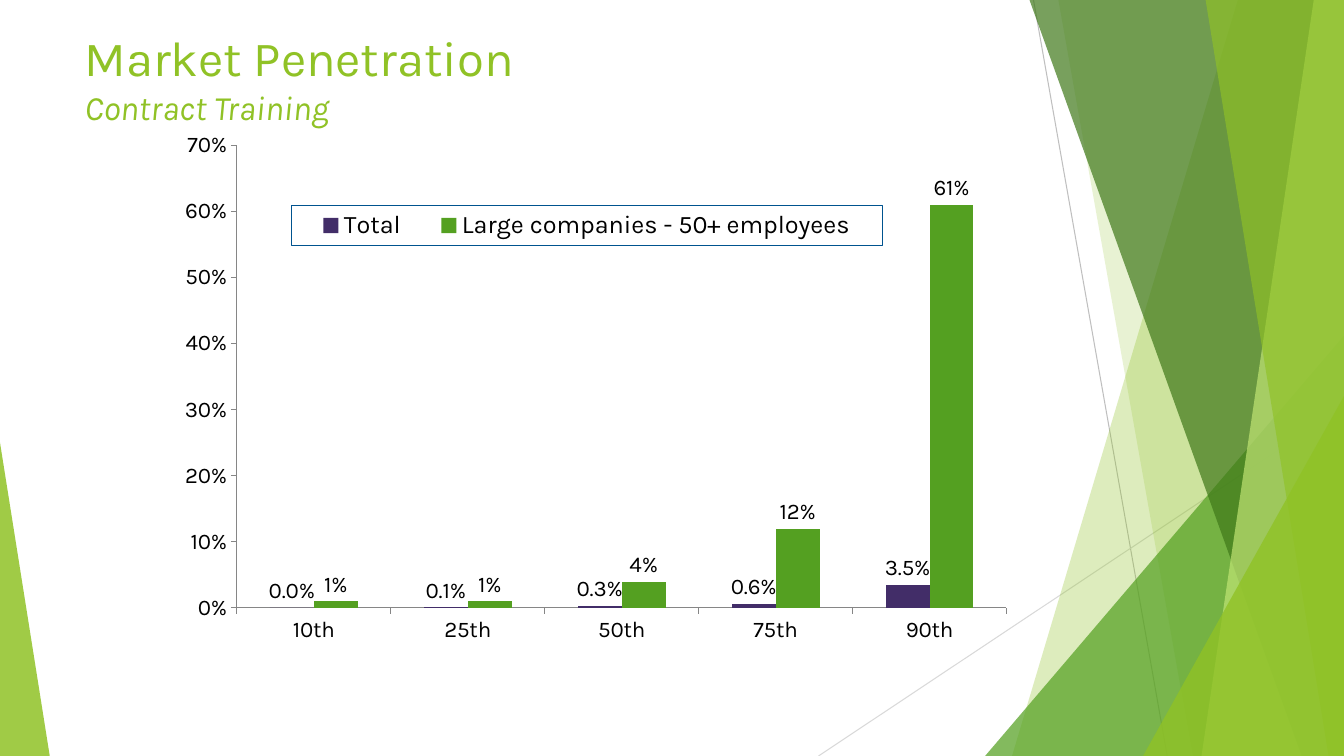
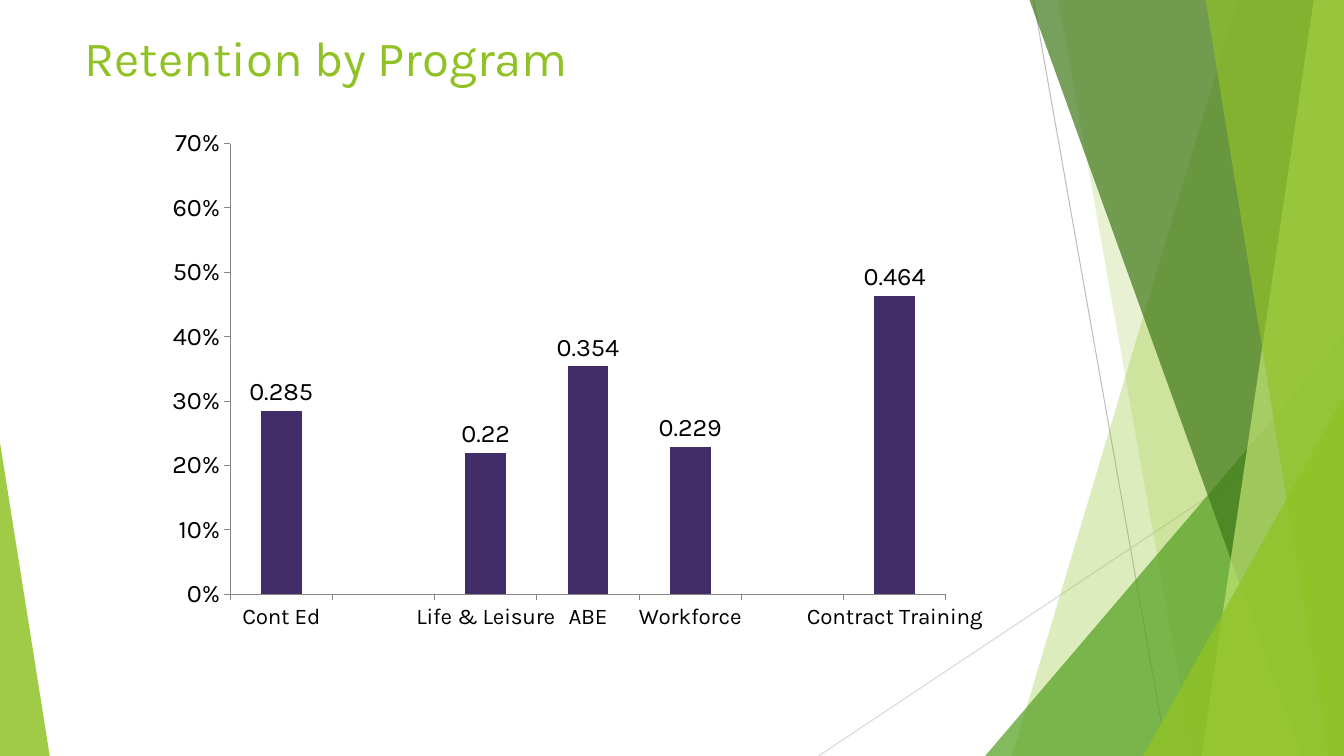
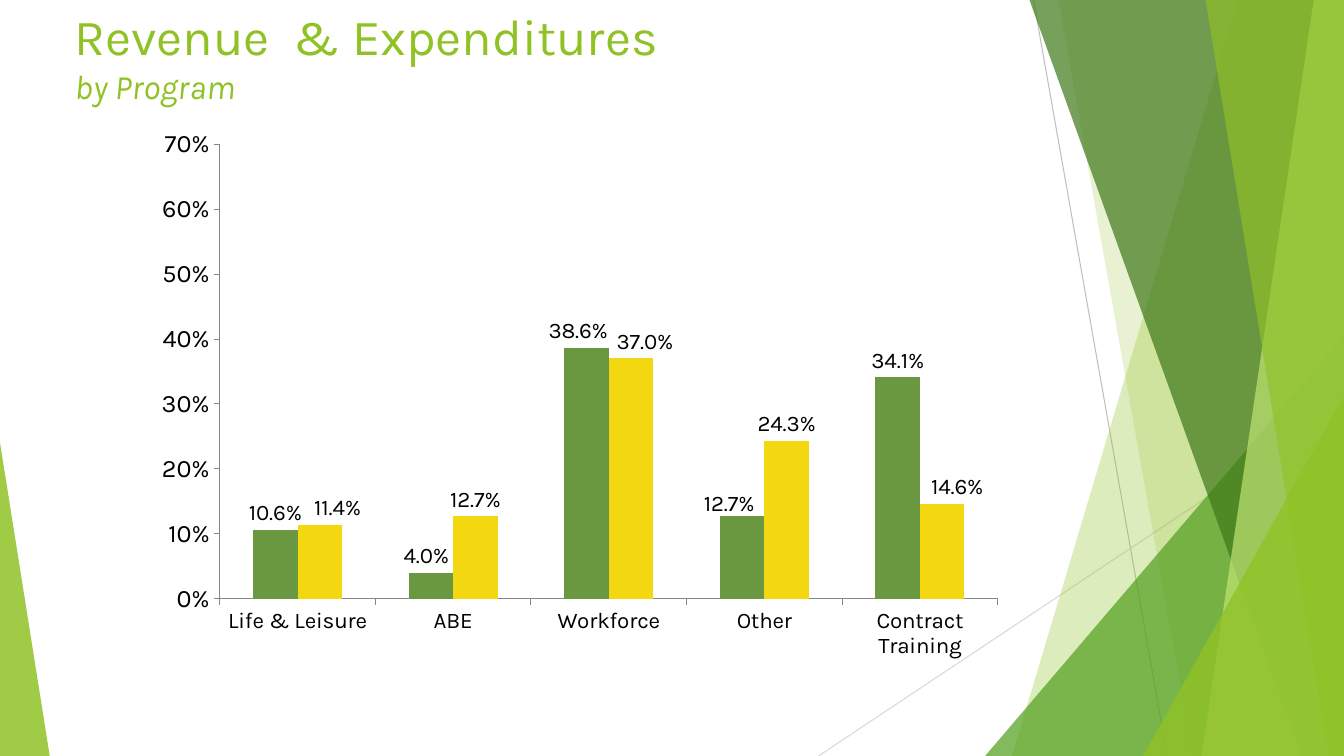
from lxml.etree import SubElement
from pptx import Presentation
from pptx.chart.data import CategoryChartData
from pptx.dml.color import RGBColor
from pptx.enum.chart import XL_CHART_TYPE, XL_LABEL_POSITION, XL_LEGEND_POSITION, XL_TICK_MARK
from pptx.enum.shapes import MSO_CONNECTOR, MSO_SHAPE
from pptx.enum.text import MSO_ANCHOR, MSO_AUTO_SIZE, PP_ALIGN
from pptx.oxml import parse_xml
from pptx.oxml.ns import nsdecls, qn
from pptx.util import Inches, Pt

SLIDE_WIDTH, SLIDE_HEIGHT = Inches(13.33), Inches(7.5)
FONT = "Karla"
LIME, GREEN, DARK_GREEN, PALE_LIME = "90C226", "54A021", "3F7819", "C0E474"
PURPLE, MOSS, YELLOW = "422D68", "699841", "F3D710"
BLACK, AXIS_GRAY, LEGEND_BLUE = "000000", "868686", "00538F"
TITLE_BOX = (5.55, 2.95, 70.5, 15.85)
PLOT_BOX = (0.104, 0.107, 0.836, 0.793)
LEGEND_BOX = (0.163, 0.211, 0.642, 0.067)


def across(percent):
    return round(SLIDE_WIDTH * percent / 100)


def down(percent):
    return round(SLIDE_HEIGHT * percent / 100)


def place(box):
    """Turn a box in percent of the slide into left, top, width and height."""
    left, top, width, height = box
    return across(left), down(top), across(width), down(height)


def rgb(color):
    return RGBColor.from_string(color)


def style_font(font, size=18, color=BLACK, italic=False):
    font.name = FONT
    font.size = Pt(size)
    font.bold = False
    font.italic = italic
    font.color.rgb = rgb(color)


def style_line(line, color):
    line.color.rgb = rgb(color)
    line.width = Pt(0.75)


def write_text(paragraph, text, **text_format):
    run = paragraph.add_run()
    run.text = text
    style_font(run.font, **text_format)


def paint(shape, color, opacity):
    """Give a shape a see-through fill, no outline and no shadow."""
    shape.shadow.inherit = False
    shape.line.fill.background()
    shape.fill.solid()
    shape.fill.fore_color.rgb = rgb(color)
    fill_color = shape.element.spPr.find(qn("a:solidFill"))[0]
    SubElement(fill_color, qn("a:alpha"), val=str(opacity * 1000))
    return shape


def add_thin_line(shapes, start, end, color):
    connector = shapes.add_connector(
        MSO_CONNECTOR.STRAIGHT, across(start[0]), down(start[1]), across(end[0]), down(end[1]))
    style_line(connector.line, color)
    SubElement(connector.element.spPr, qn("a:effectLst"))
    return connector


def add_panel(shapes, top_left, bottom_left, color, opacity):
    """Fill from a slanted left edge to the right edge of the slide."""
    builder = shapes.build_freeform(across(top_left), 0, scale=1.0)
    corners = ((100, 0), (100, 100), (bottom_left, 100))
    builder.add_line_segments([(across(x), down(y)) for x, y in corners], close=True)
    return paint(builder.convert_to_shape(), color, opacity)


def add_wedge(shapes, left, right, top, apex, color, opacity):
    """Stand a right-angled triangle on the bottom edge of the slide."""
    wedge = shapes.add_shape(
        MSO_SHAPE.ISOSCELES_TRIANGLE, *place((left, top, right - left, 100 - top)))
    wedge.adjustments[0] = apex
    return paint(wedge, color, opacity)


def decorate_layout(layout, slide):
    """Draw the facets on a slide, then move them to the layout all slides share."""
    shapes = slide.shapes
    facets = [
        add_thin_line(shapes, (76.9, 0), (86.85, 100), "BFBFBF"),
        add_thin_line(shapes, (100, 53.73), (60.9, 100), "D9D9D9"),
        add_panel(shapes, 92.1, 75.3, LIME, 30),
        add_panel(shapes, 78.75, 88.75, LIME, 20),
        add_wedge(shapes, 73.3, 100, 44.4, 1, GREEN, 72),
        add_panel(shapes, 76.6, 96.85, DARK_GREEN, 70),
        add_panel(shapes, 97.75, 89.4, PALE_LIME, 70),
        add_panel(shapes, 89.7, 98.85, LIME, 65),
        add_wedge(shapes, 85.05, 100, 52.4, 1, LIME, 80),
        add_wedge(shapes, 0, 3.7, 58.55, 0, LIME, 85),
    ]
    for number, facet in enumerate(facets, start=101):
        facet.element.xpath(".//p:cNvPr")[0].set("id", str(number))
        layout.shapes.element.append(facet.element)


def fill_title(slide, heading, subheading=None, box=TITLE_BOX, size=35.1):
    title = slide.shapes.title
    title.left, title.top, title.width, title.height = place(box)
    frame = title.text_frame
    frame.word_wrap = True
    frame.auto_size = MSO_AUTO_SIZE.NONE
    frame.vertical_anchor = MSO_ANCHOR.TOP
    write_text(frame.paragraphs[0], heading, size=size, color=LIME)
    if subheading:
        write_text(frame.add_paragraph(), subheading, size=24.4, color=LIME, italic=True)
    for paragraph in frame.paragraphs:
        paragraph.alignment = PP_ALIGN.LEFT


def manual_layout(**values):
    settings = "".join(f'<c:{name} val="{value}"/>' for name, value in values.items())
    return parse_xml(f'<c:layout {nsdecls("c")}><c:manualLayout>{settings}'
                     "</c:manualLayout></c:layout>")


def box_layout(box, **target):
    left, top, width, height = box
    return manual_layout(**target, xMode="edge", yMode="edge", x=left, y=top, w=width, h=height)


def drop_layout(element):
    for layout in element.findall(qn("c:layout")):
        element.remove(layout)


def style_axis(axis, size):
    axis.has_major_gridlines = False
    axis.major_tick_mark = XL_TICK_MARK.OUTSIDE
    axis.minor_tick_mark = XL_TICK_MARK.NONE
    style_line(axis.format.line, AXIS_GRAY)
    style_font(axis.tick_labels.font, size)


def label_series(series, number_format, size):
    labels = series.data_labels
    labels.show_value = True
    labels.number_format = number_format
    labels.number_format_is_linked = False
    labels.position = XL_LABEL_POSITION.OUTSIDE_END
    style_font(labels.font, size)


def shift_labels(chart, series_index, number_format, size, shifts):
    """Move single labels sideways and down by shares of the chart."""
    series = chart.plots[0].series[series_index]
    for point_index, (x, y) in shifts.items():
        label = series.points[point_index].data_label
        style_font(label.font, size)
        label.position = XL_LABEL_POSITION.OUTSIDE_END
        index = chart.element.xpath(
            f".//c:ser[{series_index + 1}]//c:dLbl/c:idx[@val='{point_index}']")[0]
        index.addnext(parse_xml(
            f'<c:numFmt {nsdecls("c")} formatCode="{number_format}" sourceLinked="0"/>'))
        index.addnext(manual_layout(x=x, y=y))


def add_boxed_legend(chart):
    chart.has_legend = True
    chart.legend.position = XL_LEGEND_POSITION.TOP
    chart.legend.include_in_layout = False
    style_font(chart.legend.font)
    legend = chart.element.xpath(".//c:legend")[0]
    drop_layout(legend)
    legend.find(qn("c:legendPos")).addnext(box_layout(LEGEND_BOX))
    legend.find(qn("c:overlay")).addnext(parse_xml(
        f'<c:spPr {nsdecls("c", "a")}><a:ln w="9525"><a:solidFill>'
        f'<a:srgbClr val="{LEGEND_BLUE}"/></a:solidFill></a:ln></c:spPr>'))


def add_column_chart(slide, box, categories, series_list, value_size=18, label_size=16,
                     wrap_categories=False):
    """Each series is a name, its values, a colour, a number format and label shifts."""
    data = CategoryChartData()
    data.categories = categories
    for name, values, *_ in series_list:
        data.add_series(name, values)
    chart = slide.shapes.add_chart(XL_CHART_TYPE.COLUMN_CLUSTERED, *place(box), data).chart
    style_font(chart.font)
    chart.has_title = False
    chart.has_legend = False

    style_axis(chart.category_axis, 16)
    if wrap_categories:
        chart.element.xpath(".//c:catAx/c:txPr/a:bodyPr")[0].set("rot", "0")
    value_axis = chart.value_axis
    style_axis(value_axis, value_size)
    value_axis.minimum_scale, value_axis.maximum_scale = 0, 0.7
    value_axis.major_unit = 0.1
    value_axis.tick_labels.number_format = "0%"
    value_axis.tick_labels.number_format_is_linked = False

    plot = chart.plots[0]
    plot.gap_width = 150
    plot.vary_by_categories = False
    for index, (_, _, color, number_format, shifts) in enumerate(series_list):
        series = plot.series[index]
        series.invert_if_negative = False
        series.format.fill.solid()
        series.format.fill.fore_color.rgb = rgb(color)
        label_series(series, number_format, label_size)
        shift_labels(chart, index, number_format, label_size, shifts)

    plot_area = chart.element.xpath(".//c:plotArea")[0]
    drop_layout(plot_area)
    plot_area.insert(0, box_layout(PLOT_BOX, layoutTarget="inner"))
    return chart


def build_market_penetration(slide):
    fill_title(slide, "Market Penetration", "Contract Training")
    chart = add_column_chart(
        slide, (10.5, 10.95, 68.5, 77.2), ["10th", "25th", "50th", "75th", "90th"],
        [("Total", (0, 0.001, 0.003, 0.006, 0.035), PURPLE, "0.0%", {}),
         ("Large companies - 50+ employees", (0.01, 0.01, 0.04, 0.12, 0.61), GREEN, "0%", {})],
        value_size=16)
    add_boxed_legend(chart)


def build_retention(slide):
    fill_title(slide, "Retention by Program")
    add_column_chart(
        slide, (10.5, 10.95, 63.7, 75.2),
        ["Cont Ed", "", "Life & Leisure", "ABE", "Workforce", "", "Contract Training"],
        [("Series 1", (0.285, None, 0.22, 0.354, 0.229, None, 0.464), PURPLE, "General", {})],
        label_size=18)


def build_revenue(slide):
    fill_title(slide, "Revenue  & Expenditures", "by Program",
               box=(4.8, 0, 70.5, 15.85), size=36.1)
    add_column_chart(
        slide, (9.15, 10.95, 69.25, 76.25),
        ["Life & Leisure", "ABE", "Workforce", "Other", "Contract Training"],
        [("Series 1", (0.106, 0.04, 0.386, 0.127, 0.341), MOSS, "0.0%",
          {1: (-0.005, 0), 2: (-0.009, 0), 3: (-0.014, 0.008)}),
         ("Series 2", (0.114, 0.127, 0.37, 0.243, 0.146), YELLOW, "0.0%",
          {0: (0.019, 0), 2: (0.015, 0), 4: (0.016, 0)})],
        wrap_categories=True)


def main():
    presentation = Presentation()
    presentation.slide_width, presentation.slide_height = SLIDE_WIDTH, SLIDE_HEIGHT
    layout = presentation.slide_layouts.get_by_name("Title Only")
    for build in (build_market_penetration, build_retention, build_revenue):
        build(presentation.slides.add_slide(layout))
    decorate_layout(layout, presentation.slides[0])
    presentation.save("out.pptx")


if __name__ == "__main__":
    main()
